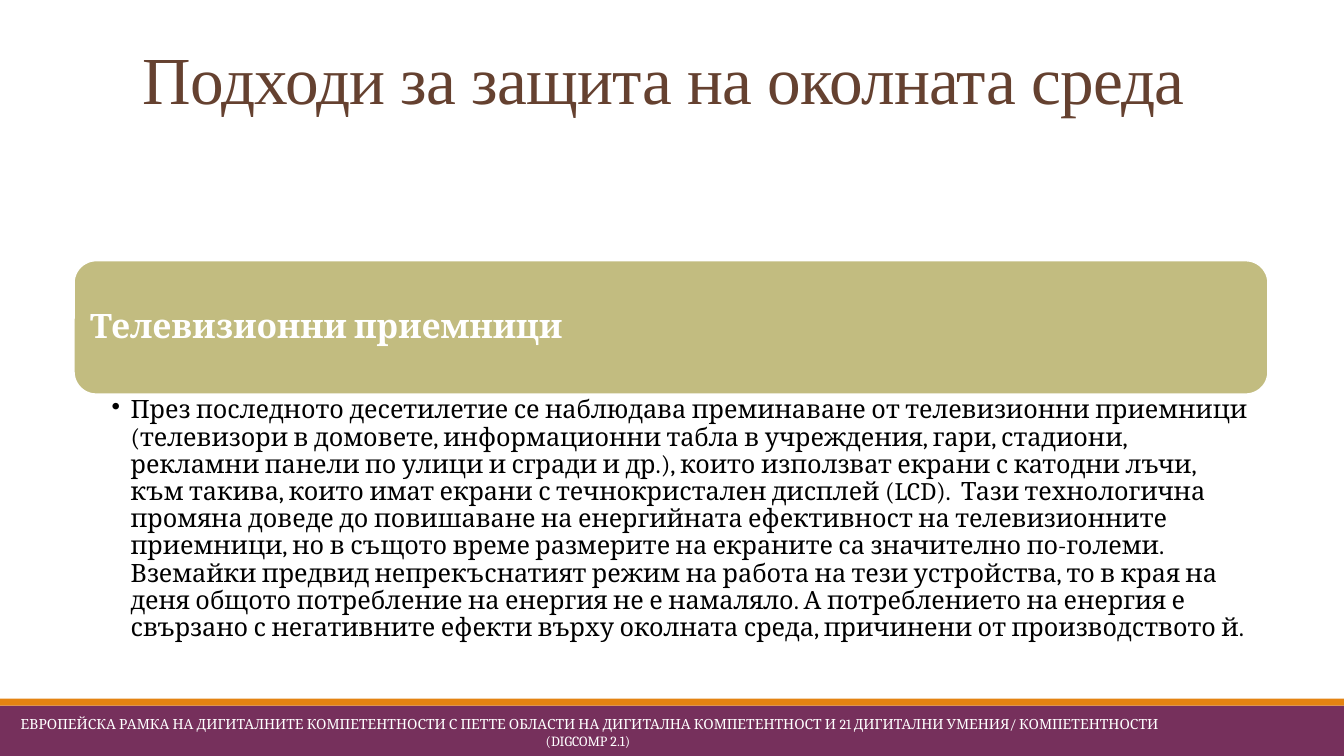
from dataclasses import dataclass

from lxml.etree import SubElement
from pptx import Presentation
from pptx.dml.color import RGBColor
from pptx.enum.shapes import MSO_SHAPE as Shape
from pptx.enum.text import MSO_ANCHOR as Anchor, PP_ALIGN as Align
from pptx.oxml.ns import qn
from pptx.slide import Slide
from pptx.util import Pt


@dataclass(frozen=True)
class Theme:
    plum: str = "76305C"
    orange: str = "E48312"
    olive: str = "C2BC80"
    brown: str = "654130"
    white: str = "FFFFFF"
    black: str = "000000"
    title_font: str = "Times New Roman"
    body_font: str = "Cambria"
    title_size: float = 48
    heading_size: float = 24
    body_size: float = 18
    footer_size: float = 10


@dataclass(frozen=True)
class Box:
    left: float
    top: float
    width: float
    height: float

    def lengths(self) -> tuple[Pt, Pt, Pt, Pt]:
        return Pt(self.left), Pt(self.top), Pt(self.width), Pt(self.height)


@dataclass(frozen=True)
class Panel:
    box: Box
    kind: Shape
    fill: str
    outline: str | None = None


@dataclass(frozen=True)
class Label:
    box: Box
    text: str
    size: float
    color: str
    font: str
    insets: tuple[float, float, float, float]
    align: Align = Align.LEFT
    anchor: Anchor = Anchor.MIDDLE
    line_spacing: float = 1.0
    bold: bool = False
    tracking: float = 0
    bullet_indent: float = 0


THEME = Theme()
WIDTH, HEIGHT = 960, 540
BAND_TOP, STRIPE = 504, 5
CARD_LEFT, CARD_TOP, CARD_WIDTH, CARD_HEIGHT = 52.8, 186.1, 853, 95.5
CARD_PAD = 4.5

PANELS = [
    Panel(Box(0, BAND_TOP, WIDTH, HEIGHT - BAND_TOP), Shape.RECTANGLE, THEME.plum),
    Panel(Box(0, BAND_TOP - STRIPE, WIDTH, STRIPE), Shape.RECTANGLE, THEME.orange),
    Panel(Box(CARD_LEFT, CARD_TOP, CARD_WIDTH, CARD_HEIGHT), Shape.ROUNDED_RECTANGLE,
          THEME.olive, THEME.white),
]

LABELS = [
    Label(Box(0, 0, WIDTH, 88), "Подходи за защита на околната среда ",
          THEME.title_size, THEME.brown, THEME.title_font, (7.2, 3.6, 7.2, 3.6),
          Align.CENTER, Anchor.BOTTOM, 0.85, tracking=-0.5),
    Label(Box(0, 508.5, 840, 29),
          " ЕВРОПЕЙСКА РАМКА НА ДИГИТАЛНИТЕ КОМПЕТЕНТНОСТИ С ПЕТТЕ ОБЛАСТИ НА ДИГИТАЛНА "
          "КОМПЕТЕНТНОСТ И 21 ДИГИТАЛНИ УМЕНИЯ/ КОМПЕТЕНТНОСТИ (DIGCOMP 2.1)",
          THEME.footer_size, THEME.white, THEME.body_font, (3, 3, 3, 3), Align.CENTER),
    Label(Box(CARD_LEFT + CARD_PAD, CARD_TOP + CARD_PAD,
              CARD_WIDTH - 2 * CARD_PAD, CARD_HEIGHT - 2 * CARD_PAD),
          "Телевизионни приемници", THEME.heading_size, THEME.white, THEME.body_font,
          (7.2, 7.2, 7.2, 7.2), line_spacing=0.9, bold=True),
    Label(Box(CARD_LEFT, CARD_TOP + CARD_HEIGHT, CARD_WIDTH, 156),
          "През последното десетилетие се наблюдава преминаване от телевизионни приемници "
          "(телевизори в домовете, информационни табла в учреждения, гари, стадиони, "
          "рекламни панели по улици и сгради и др.), които използват екрани с катодни лъчи, "
          "към такива, които имат екрани с течнокристален дисплей (LCD).  Тази технологична "
          "промяна доведе до повишаване на енергийната ефективност на телевизионните "
          "приемници, но в същото време размерите на екраните са значително по-големи. "
          "Вземайки предвид непрекъснатият режим на работа на тези устройства, то в края на "
          "деня общото потребление на енергия не е намаляло. А потреблението на енергия е "
          "свързано с негативните ефекти върху околната среда, причинени от производството й.",
          THEME.body_size, THEME.black, THEME.body_font, (27, 2, 10, 2),
          anchor=Anchor.TOP, line_spacing=0.9, bullet_indent=13.5),
]


def add_panel(slide: Slide, panel: Panel) -> None:
    s = slide.shapes.add_shape(panel.kind, *panel.box.lengths())
    s.shadow.inherit = False
    s.fill.solid()
    s.fill.fore_color.rgb = RGBColor.from_string(panel.fill)
    if panel.outline:
        s.line.color.rgb = RGBColor.from_string(panel.outline)
        s.line.width = Pt(1.25)
    else:
        s.line.fill.background()


def add_label(slide: Slide, label: Label) -> None:
    tf = slide.shapes.add_textbox(*label.box.lengths()).text_frame
    tf.word_wrap = True
    tf.vertical_anchor = label.anchor
    tf.margin_left, tf.margin_top, tf.margin_right, tf.margin_bottom = map(Pt, label.insets)
    tf.text = label.text
    p = tf.paragraphs[0]
    p.alignment = label.align
    p.line_spacing = label.line_spacing
    r = p.runs[0]
    r.font.name = label.font
    r.font.size = Pt(label.size)
    r.font.bold = label.bold
    r.font.color.rgb = RGBColor.from_string(label.color)
    if label.tracking:
        r.font._element.set("spc", str(round(label.tracking * 100)))
    if label.bullet_indent:
        p.level = 1
        props = p._p.get_or_add_pPr()
        props.set("marL", str(Pt(label.bullet_indent)))
        props.set("indent", str(-Pt(label.bullet_indent)))
        SubElement(props, qn("a:buChar")).set("char", "•")


def main() -> None:
    prs = Presentation()
    prs.slide_width, prs.slide_height = Pt(WIDTH), Pt(HEIGHT)
    slide = prs.slides.add_slide(prs.slide_layouts[6])
    for panel in PANELS:
        add_panel(slide, panel)
    for label in LABELS:
        add_label(slide, label)
    prs.save("out.pptx")


if __name__ == "__main__":
    main()
